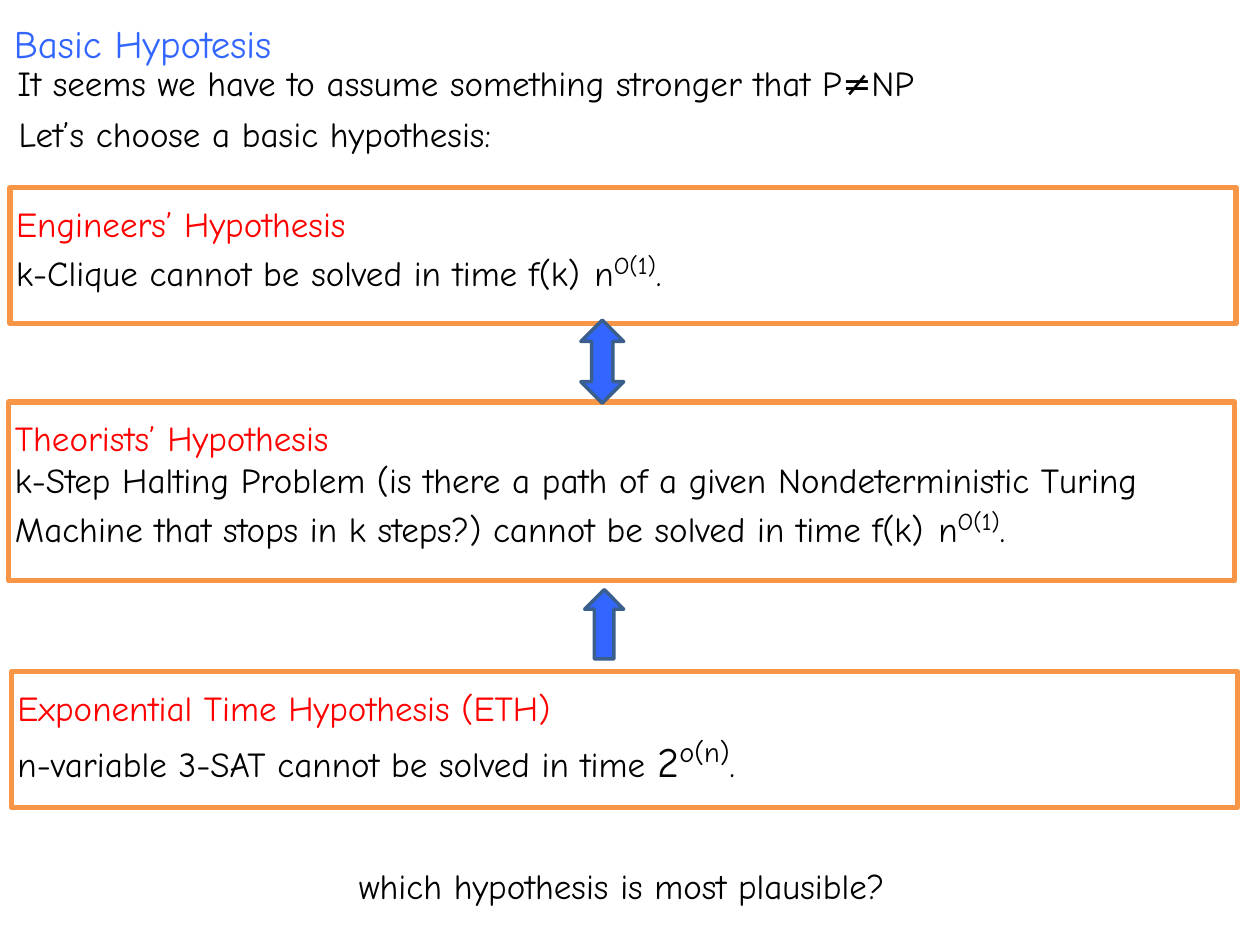
from dataclasses import dataclass

from pptx import Presentation
from pptx.dml.color import RGBColor
from pptx.enum.shapes import MSO_SHAPE as Shape
from pptx.enum.text import MSO_ANCHOR as Anchor, MSO_AUTO_SIZE as AutoSize, PP_ALIGN as Align
from pptx.util import Inches, Pt


@dataclass(frozen=True)
class Theme:
    font: str = "Comic Neue"
    ink: RGBColor = RGBColor(0x00, 0x00, 0x00)
    accent: RGBColor = RGBColor(0x33, 0x66, 0xFF)
    heading: RGBColor = RGBColor(0xFF, 0x00, 0x00)
    frame: RGBColor = RGBColor(0xF7, 0x96, 0x46)
    arrow_edge: RGBColor = RGBColor(0x3A, 0x5F, 0x8C)
    title_size: float = 22.2
    body_size: float = 20
    large_size: float = 24
    huge_size: float = 28
    frame_width: float = 3
    arrow_width: float = 2


@dataclass(frozen=True)
class Span:
    text: str
    size: float = Theme.body_size
    raised: bool = False


class SlideBuilder:
    def __init__(self, slide, theme):
        self.slide = slide
        self.theme = theme

    def style(self, run, size, color):
        run.font.name = self.theme.font
        run.font.size = Pt(size)
        run.font.color.rgb = color

    def title(self, text, left, top, width, height):
        box = self.slide.shapes.title
        box.left, box.top, box.width, box.height = map(Inches, (left, top, width, height))
        frame = box.text_frame
        frame.text = text
        frame.auto_size = AutoSize.NONE
        frame.vertical_anchor = Anchor.TOP
        para = frame.paragraphs[0]
        para.alignment = Align.LEFT
        para.space_before = Pt(0)
        self.style(para.runs[0], self.theme.title_size, self.theme.accent)

    def text_box(self, left, top, width, height):
        box = self.slide.shapes.add_textbox(*map(Inches, (left, top, width, height)))
        box.text_frame.word_wrap = True
        box.text_frame.auto_size = AutoSize.SHAPE_TO_FIT_TEXT
        return box.text_frame

    def line(self, text, left, top, width, align=Align.LEFT):
        para = self.text_box(left, top, width, 0.44).paragraphs[0]
        para.text = text
        para.alignment = align
        self.style(para.runs[0], self.theme.body_size, self.theme.ink)

    def shape(self, kind, bounds, edge, edge_width, fill=None, rotation=0):
        shape = self.slide.shapes.add_shape(kind, *map(Inches, bounds))
        shape.shadow.inherit = False
        shape.rotation = rotation
        shape.line.color.rgb = edge
        shape.line.width = Pt(edge_width)
        if fill is None:
            shape.fill.background()
        else:
            shape.fill.solid()
            shape.fill.fore_color.rgb = fill

    def arrow(self, kind, bounds, rotation):
        self.shape(kind, bounds, self.theme.arrow_edge, self.theme.arrow_width,
                   self.theme.accent, rotation)

    def hypothesis(self, heading, spans, left, top, height, text_width):
        """Draw a framed statement: a heading line above a paragraph of spans."""
        frame = self.text_box(left - 0.05, top + 0.07, text_width, height - 0.24)
        frame.text = heading
        self.style(frame.paragraphs[0].runs[0], self.theme.body_size, self.theme.heading)
        para = frame.add_paragraph()
        for span in spans:
            run = para.add_run()
            run.text = span.text
            self.style(run, span.size, self.theme.ink)
            if span.raised:
                run.font._element.set("baseline", "30000")
        self.shape(Shape.RECTANGLE, (left, top, 9.73, height),
                   self.theme.frame, self.theme.frame_width)


def main():
    deck = Presentation()
    deck.slide_width, deck.slide_height = Inches(10), Inches(7.5)
    theme = Theme()
    page = SlideBuilder(deck.slides.add_slide(deck.slide_layouts[5]), theme)

    page.title("Basic Hypotesis", 0.01, 0.11, 6.42, 0.45)
    page.line("It seems we have to assume something stronger that P≠NP", 0.04, 0.44, 9.93)
    page.line("Let’s choose a basic hypothesis:", 0.05, 0.84, 5.53)

    polynomial_factor = [
        Span(" ", theme.large_size),
        Span("n"),
        Span("O(1)", theme.large_size, raised=True),
        Span("."),
    ]
    page.hypothesis(
        "Engineers’ Hypothesis",
        [Span("k-Clique cannot be solved in time f(k)"), *polynomial_factor],
        left=0.08, top=1.49, height=1.08, text_width=9.93)
    page.hypothesis(
        "Theorists’ Hypothesis",
        [Span("k-Step Halting Problem (is there a path of a given Nondeterministic Turing "
              "Machine that stops in k steps?) cannot be solved in time f(k)"),
         *polynomial_factor],
        left=0.07, top=3.19, height=1.42, text_width=9.78)
    page.hypothesis(
        "Exponential Time Hypothesis (ETH)",
        [Span("n-variable 3-SAT cannot be solved in time "),
         Span("2", theme.large_size),
         Span("o(n)", theme.huge_size, raised=True),
         Span(".")],
        left=0.09, top=5.33, height=1.08, text_width=9.93)

    page.arrow(Shape.LEFT_RIGHT_ARROW, (4.45, 2.7, 0.66, 0.34), rotation=90)
    page.arrow(Shape.DOWN_ARROW, (4.64, 4.68, 0.31, 0.55), rotation=180)
    page.line("which hypothesis is most plausible?", 1.36, 6.81, 7.15, Align.CENTER)

    deck.save("out.pptx")


if __name__ == "__main__":
    main()
